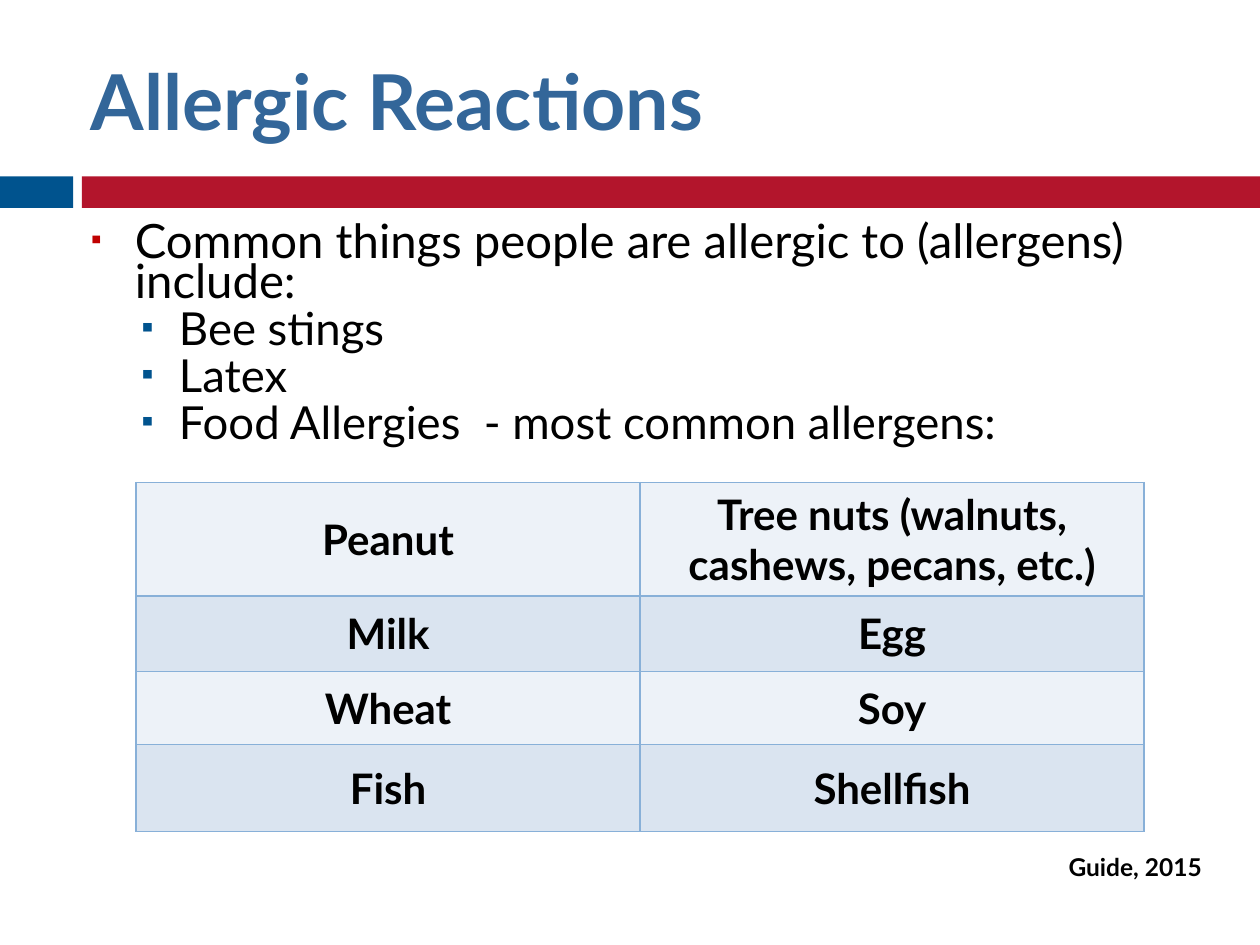
from dataclasses import dataclass

from lxml import etree
from pptx import Presentation
from pptx.dml.color import RGBColor
from pptx.enum.shapes import MSO_SHAPE
from pptx.enum.text import MSO_ANCHOR, MSO_AUTO_SIZE, PP_ALIGN
from pptx.oxml.ns import qn
from pptx.util import Inches, Pt

RECTANGLE = MSO_SHAPE.RECTANGLE
MIDDLE, TOP = MSO_ANCHOR.MIDDLE, MSO_ANCHOR.TOP
LEFT, CENTER, RIGHT = PP_ALIGN.LEFT, PP_ALIGN.CENTER, PP_ALIGN.RIGHT
NO_AUTOFIT = MSO_AUTO_SIZE.NONE


@dataclass(frozen=True)
class Theme:
    font: str = "Lato"
    title: str = "336699"
    text: str = "000000"
    blue: str = "00538E"
    red: str = "B3152C"
    bullet_red: str = "C00000"
    border: str = "88B0D8"
    bands: tuple[str, str] = ("EDF2F8", "DAE4F0")
    title_size: int = 44
    body_size: int = 27
    item_size: int = 26
    table_size: int = 24
    source_size: int = 14
    inset: float = 0.05
    line_spacing: float = 0.7


@dataclass(frozen=True)
class Bar:
    left: float
    width: float
    color: str


@dataclass(frozen=True)
class ListStyle:
    size: int
    level: int
    margin: float
    indent: float
    space_before: int
    bullet_color: str = ""
    bullet_percent: int = 0
    alignment: PP_ALIGN = LEFT
    bold: bool = False


THEME = Theme()
BARS = (Bar(0, 0.58, THEME.blue), Bar(0.65, 9.35, THEME.red))
LEAD = ListStyle(THEME.body_size, 0, 0.35, -0.35, 7, THEME.bullet_red, 60)
ITEM = ListStyle(THEME.item_size, 1, 0.7, -0.3, 5, THEME.blue, 70)
# The wide space before the source leaves room for the table.
SOURCE = ListStyle(THEME.source_size, 1, 0.3, 0.1, 236, alignment=RIGHT, bold=True)
BODY = (
    ("Common things people are allergic to (allergens) include:", LEAD),
    ("Bee stings", ITEM),
    ("Latex", ITEM),
    ("Food Allergies  - most common allergens:", ITEM),
    ("Guide, 2015", SOURCE),
)
ALLERGENS = (
    ("Peanut", "Tree nuts (walnuts, cashews, pecans, etc.)"),
    ("Milk", "Egg"),
    ("Wheat", "Soy"),
    ("Fish", "Shellfish"),
)
COLUMN_WIDTH = 4
ROW_HEIGHTS = (0.9, 0.6, 0.58, 0.69)


def apply_format(target, values: dict) -> None:
    for name, value in values.items():
        setattr(target, name, value)


def write_text(paragraph, text: str, size: int, color: str, bold: bool) -> None:
    run = paragraph.add_run()
    run.text = text
    apply_format(run.font, {"name": THEME.font, "size": Pt(size), "bold": bold})
    run.font.color.rgb = RGBColor.from_string(color)


def place(shape, left: float, top: float, width: float, height: float) -> None:
    apply_format(shape, {"left": Inches(left), "top": Inches(top),
                         "width": Inches(width), "height": Inches(height)})


def set_insets(target, anchor: MSO_ANCHOR) -> None:
    inset = Inches(THEME.inset)
    apply_format(target, {"margin_left": inset, "margin_right": inset,
                          "margin_top": inset, "margin_bottom": inset,
                          "vertical_anchor": anchor})


def set_frame(frame, anchor: MSO_ANCHOR) -> None:
    set_insets(frame, anchor)
    apply_format(frame, {"word_wrap": True, "auto_size": NO_AUTOFIT})


def set_bullet(paragraph, style: ListStyle) -> None:
    properties = paragraph._p.get_or_add_pPr()
    properties.set("marL", str(Inches(style.margin)))
    properties.set("indent", str(Inches(style.indent)))
    if not style.bullet_color:
        etree.SubElement(properties, qn("a:buNone"))
        return
    color = etree.SubElement(properties, qn("a:buClr"))
    etree.SubElement(color, qn("a:srgbClr"), val=style.bullet_color)
    etree.SubElement(properties, qn("a:buSzPct"), val=str(style.bullet_percent * 1000))
    etree.SubElement(properties, qn("a:buFont"), typeface=THEME.font)
    etree.SubElement(properties, qn("a:buChar"), char="▪")


def set_borders(cell) -> None:
    properties = cell._tc.get_or_add_tcPr()
    for side in ("lnL", "lnR", "lnT", "lnB"):
        line = etree.SubElement(properties, qn(f"a:{side}"), w=str(Pt(1)))
        fill = etree.SubElement(line, qn("a:solidFill"))
        etree.SubElement(fill, qn("a:srgbClr"), val=THEME.border)


def add_bar(slide, bar: Bar) -> None:
    shape = slide.shapes.add_shape(RECTANGLE, Inches(bar.left), Inches(1.4),
                                   Inches(bar.width), Inches(0.25))
    shape.shadow.inherit = False
    shape.fill.solid()
    shape.fill.fore_color.rgb = RGBColor.from_string(bar.color)
    shape.line.fill.background()


def fill_title(shape) -> None:
    place(shape, 0.67, 0.25, 8.92, 1.08)
    set_frame(shape.text_frame, MIDDLE)
    paragraph = shape.text_frame.paragraphs[0]
    paragraph.alignment = LEFT
    write_text(paragraph, "Allergic Reactions", THEME.title_size, THEME.title, True)


def fill_body(shape) -> None:
    place(shape, 0.67, 1.75, 8.92, 5.75)
    frame = shape.text_frame
    set_frame(frame, TOP)
    for index, (text, style) in enumerate(BODY):
        paragraph = frame.add_paragraph() if index else frame.paragraphs[0]
        apply_format(paragraph, {"level": style.level, "alignment": style.alignment,
                                 "line_spacing": THEME.line_spacing,
                                 "space_before": Pt(style.space_before)})
        set_bullet(paragraph, style)
        write_text(paragraph, text, style.size, THEME.text, style.bold)


def fill_cell(cell, text: str, color: str) -> None:
    set_insets(cell, MIDDLE)
    set_borders(cell)
    cell.fill.solid()
    cell.fill.fore_color.rgb = RGBColor.from_string(color)
    paragraph = cell.text_frame.paragraphs[0]
    paragraph.alignment = CENTER
    write_text(paragraph, text, THEME.table_size, THEME.text, True)


def add_allergen_table(slide) -> None:
    column_count = len(ALLERGENS[0])
    table = slide.shapes.add_table(
        len(ALLERGENS), column_count, Inches(1.08), Inches(3.83),
        Inches(COLUMN_WIDTH * column_count), Inches(sum(ROW_HEIGHTS))).table
    apply_format(table, {"first_row": False, "horz_banding": False})
    for row_index, (names, height) in enumerate(zip(ALLERGENS, ROW_HEIGHTS)):
        table.rows[row_index].height = Inches(height)
        for column_index, name in enumerate(names):
            fill_cell(table.cell(row_index, column_index), name,
                      THEME.bands[row_index % 2])


def main() -> None:
    presentation = Presentation()
    presentation.slide_width, presentation.slide_height = Inches(10), Inches(7.5)
    slide = presentation.slides.add_slide(presentation.slide_layouts[1])
    for bar in BARS:
        add_bar(slide, bar)
    fill_title(slide.shapes.title)
    fill_body(slide.placeholders[1])
    add_allergen_table(slide)
    presentation.save("out.pptx")


if __name__ == "__main__":
    main()
